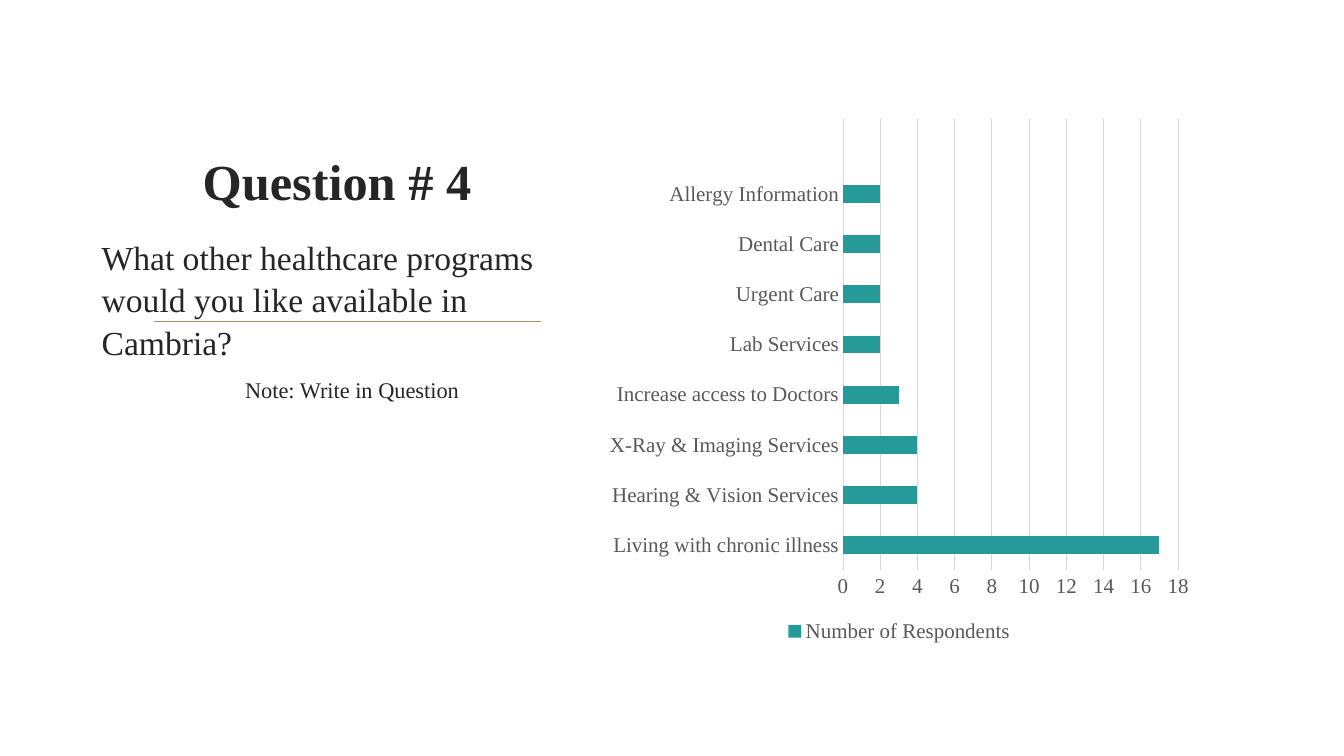
from dataclasses import dataclass

from lxml.etree import SubElement
from pptx import Presentation
from pptx.chart.data import CategoryChartData
from pptx.dml.color import RGBColor
from pptx.enum.chart import XL_CHART_TYPE, XL_LEGEND_POSITION, XL_TICK_MARK
from pptx.enum.shapes import MSO_CONNECTOR
from pptx.enum.text import MSO_ANCHOR, PP_ALIGN
from pptx.oxml.ns import qn
from pptx.slide import Slide
from pptx.util import Pt

FONT = "Times New Roman"
INK, LABEL, GRID, BAR, RULE = "262626", "595959", "D9D9D9", "269999", "AB946B"


@dataclass
class Line:
    text: str
    size: float
    bold: bool = False
    align: PP_ALIGN = PP_ALIGN.LEFT
    before: float = 0
    after: float = 0
    spacing: float = 1.0


@dataclass
class Block:
    left: float
    top: float
    width: float
    height: float
    anchor: MSO_ANCHOR
    lines: list[Line]


BLOCKS = [
    Block(94.3, 87.8, 293, 66.5, MSO_ANCHOR.BOTTOM,
          [Line("Question # 4", 36, bold=True, align=PP_ALIGN.CENTER)]),
    Block(65.5, 164.2, 372, 135.4, MSO_ANCHOR.TOP, [
        Line("What other healthcare programs would you like available in Cambria?",
             24, after=6, spacing=1.05),
        Line("Note: Write in Question", 16, align=PP_ALIGN.CENTER,
             before=3.2, after=6, spacing=1.05),
    ]),
]

# The last category is an empty band at the top of the chart
RESPONSES = [
    ("Living with chronic illness", 17),
    ("Hearing & Vision Services", 4),
    ("X-Ray & Imaging Services", 4),
    ("Increase access to Doctors", 3),
    ("Lab Services", 2),
    ("Urgent Care", 2),
    ("Dental Care", 2),
    ("Allergy Information", 2),
    ("", None),
]


def color(value: str) -> RGBColor:
    return RGBColor.from_string(value)


def style_font(font, size: float, ink: str, bold: bool = False) -> None:
    font.name, font.size, font.bold = FONT, Pt(size), bold
    font.color.rgb = color(ink)


def style_line(line, ink: str, width: float) -> None:
    line.color.rgb = color(ink)
    line.width = Pt(width)


def draw_block(slide: Slide, block: Block) -> None:
    frame = slide.shapes.add_textbox(
        Pt(block.left), Pt(block.top), Pt(block.width), Pt(block.height)).text_frame
    frame.word_wrap = True
    frame.vertical_anchor = block.anchor
    for index, line in enumerate(block.lines):
        paragraph = frame.add_paragraph() if index else frame.paragraphs[0]
        paragraph.text = line.text
        paragraph.alignment = line.align
        paragraph.space_before, paragraph.space_after = Pt(line.before), Pt(line.after)
        paragraph.line_spacing = line.spacing
        style_font(paragraph.font, line.size, INK, line.bold)


def draw_rule(slide: Slide, left: float, right: float, y: float) -> None:
    rule = slide.shapes.add_connector(
        MSO_CONNECTOR.STRAIGHT, Pt(left), Pt(y), Pt(right), Pt(y))
    style_line(rule.line, RULE, 1.25)
    SubElement(rule.line._get_or_add_ln().getparent(), qn("a:effectLst"))


def draw_responses(slide: Slide) -> None:
    data = CategoryChartData()
    data.categories = [program for program, _ in RESPONSES]
    data.add_series("Number of Respondents", [count for _, count in RESPONSES])
    chart = slide.shapes.add_chart(
        XL_CHART_TYPE.BAR_CLUSTERED, Pt(427), Pt(77), Pt(430.6), Pt(385.2), data).chart
    chart.has_title = False
    style_font(chart.font, 15, LABEL)

    # Bars
    plot = chart.plots[0]
    plot.vary_by_categories = False
    plot.gap_width = 182
    respondents = plot.series[0]
    respondents.format.fill.solid()
    respondents.format.fill.fore_color.rgb = color(BAR)

    # Axes
    programs, counts = chart.category_axis, chart.value_axis
    for axis in (programs, counts):
        axis.major_tick_mark = axis.minor_tick_mark = XL_TICK_MARK.NONE
        style_font(axis.tick_labels.font, 15, LABEL)
    style_line(programs.format.line, GRID, 0.75)
    counts.format.line.fill.background()
    counts.minimum_scale, counts.maximum_scale, counts.major_unit = 0, 18, 2
    counts.has_major_gridlines = True
    style_line(counts.major_gridlines.format.line, GRID, 0.75)

    # Legend
    chart.has_legend = True
    chart.legend.position = XL_LEGEND_POSITION.BOTTOM
    chart.legend.include_in_layout = False
    style_font(chart.legend.font, 15, LABEL)


def main() -> None:
    deck = Presentation()
    deck.slide_width, deck.slide_height = Pt(960), Pt(540)
    slide = deck.slides.add_slide(deck.slide_layouts[6])
    draw_rule(slide, 110.2, 386.6, 229.7)
    for block in BLOCKS:
        draw_block(slide, block)
    draw_responses(slide)
    deck.save("out.pptx")


if __name__ == "__main__":
    main()
